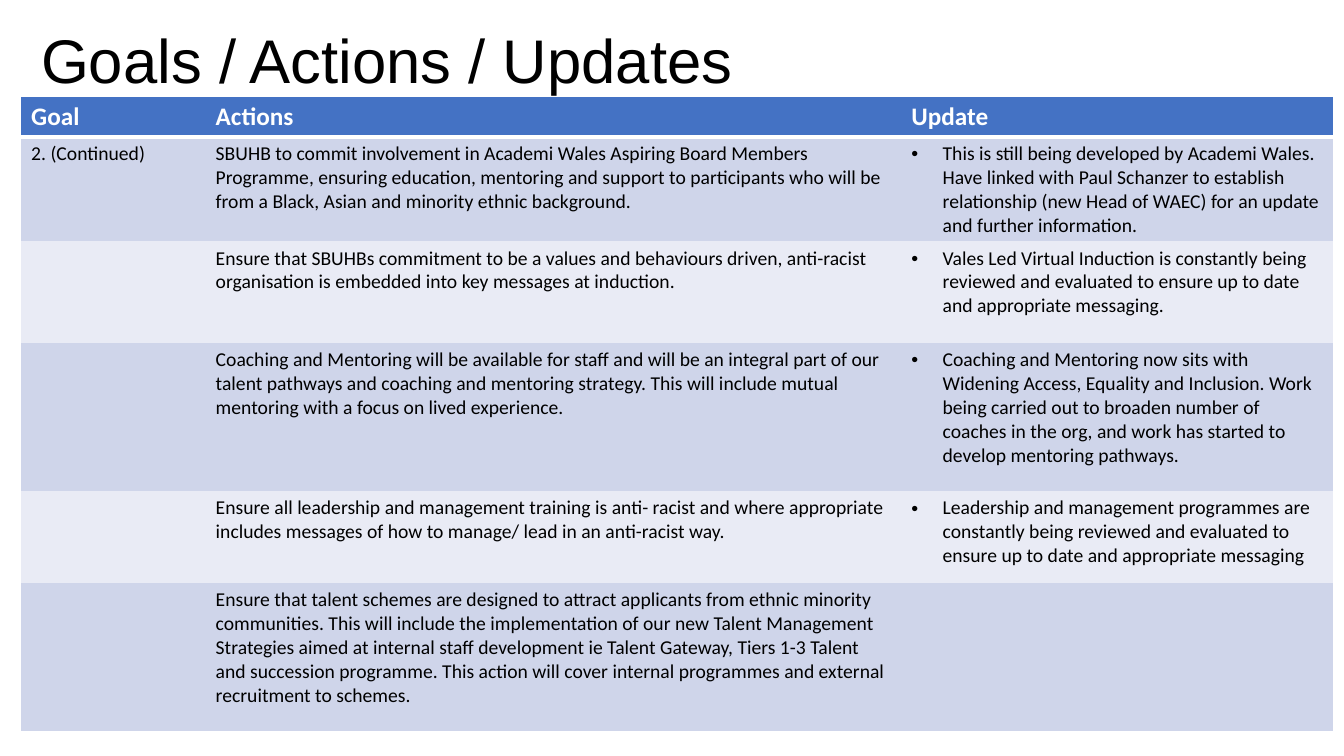
from lxml import etree
from pptx import Presentation
from pptx.dml.color import RGBColor
from pptx.enum.text import MSO_ANCHOR
from pptx.oxml.ns import qn
from pptx.util import Inches, Pt

MIDDLE = MSO_ANCHOR.MIDDLE
BLACK = RGBColor(0x00, 0x00, 0x00)
WHITE = RGBColor(0xFF, 0xFF, 0xFF)
HEADER_BLUE = RGBColor(0x44, 0x72, 0xC4)
BAND_FILLS = (RGBColor(0xCF, 0xD5, 0xEA), RGBColor(0xE9, 0xEB, 0xF5))
PLAIN_STYLE = "{2D5ABB26-0587-4C30-8999-92F81FD0307C}"

# Content
TITLE = "Goals / Actions / Updates"
ROWS = [
    ("Goal", "Actions", "Update"),
    ("2. (Continued)",
     "SBUHB to commit involvement in Academi Wales Aspiring Board Members Programme, "
     "ensuring education, mentoring and support to participants who will be from a "
     "Black, Asian and minority ethnic background.",
     "This is still being developed by Academi Wales. Have linked with Paul Schanzer to "
     "establish relationship (new Head of WAEC) for an update and further information."),
    ("",
     "Ensure that SBUHBs commitment to be a values and behaviours driven, anti-racist "
     "organisation is embedded into key messages at induction.",
     "Vales Led Virtual Induction is constantly being reviewed and evaluated to ensure "
     "up to date and appropriate messaging."),
    ("",
     "Coaching and Mentoring will be available for staff and will be an integral part of "
     "our talent pathways and coaching and mentoring strategy. This will include mutual "
     "mentoring with a focus on lived experience.",
     "Coaching and Mentoring now sits with Widening Access, Equality and Inclusion. Work "
     "being carried out to broaden number of coaches in the org, and work has started to "
     "develop mentoring pathways."),
    ("",
     "Ensure all leadership and management training is anti- racist and where appropriate "
     "includes messages of how to manage/ lead in an anti-racist way.",
     "Leadership and management programmes are constantly being reviewed and evaluated to "
     "ensure up to date and appropriate messaging"),
    ("",
     "Ensure that talent schemes are designed to attract applicants from ethnic minority "
     "communities. This will include the implementation of our new Talent Management "
     "Strategies aimed at internal staff development ie Talent Gateway, Tiers 1-3 Talent "
     "and succession programme. This action will cover internal programmes and external "
     "recruitment to schemes.",
     ""),
]
COLUMN_WIDTHS = (1.83, 6.9, 4.28)
ROW_HEIGHTS = (0.39, 1.01, 1.01, 1.47, 0.91, 1.47)
UPDATE_COLUMN = 2


def set_font(para, name, size, color, bold=False):
    font = para.font
    font.name, font.size, font.bold = name, Pt(size), bold
    font.color.rgb = color


def add_bullet(para):
    properties = para._p.get_or_add_pPr()
    properties.set("marL", str(Inches(0.31)))
    properties.set("indent", str(-Inches(0.31)))
    etree.SubElement(properties, qn("a:buFont"), typeface="Arial")
    etree.SubElement(properties, qn("a:buChar"), char="•")


def add_bottom_border(cell, color, points):
    line = etree.Element(qn("a:lnB"), w=str(Pt(points)))
    fill = etree.SubElement(line, qn("a:solidFill"))
    etree.SubElement(fill, qn("a:srgbClr"), val=str(color))
    cell._tc.get_or_add_tcPr().insert(0, line)


deck = Presentation()
deck.slide_width, deck.slide_height = Inches(13.33), Inches(7.5)
page = deck.slides.add_slide(deck.slide_layouts[6])

# Title
box = page.shapes.add_textbox(Inches(0.31), Inches(-0.22), Inches(11.5), Inches(1.71))
box.text_frame.word_wrap = True
box.text_frame.vertical_anchor = MIDDLE
heading = box.text_frame.paragraphs[0]
heading.text = TITLE
heading.line_spacing = 0.9
set_font(heading, "Arial", 44, BLACK)

# Goals table
frame = page.shapes.add_table(
    len(ROWS), len(COLUMN_WIDTHS), Inches(0.21), Inches(0.96),
    Inches(sum(COLUMN_WIDTHS)), Inches(sum(ROW_HEIGHTS)))
table = frame.table
table._tbl.tblPr.find(qn("a:tableStyleId")).text = PLAIN_STYLE
for column, width in zip(table.columns, COLUMN_WIDTHS):
    column.width = Inches(width)
for row, height in zip(table.rows, ROW_HEIGHTS):
    row.height = Inches(height)

for row_index, texts in enumerate(ROWS):
    is_header = row_index == 0
    for column_index, text in enumerate(texts):
        cell = table.cell(row_index, column_index)
        cell.fill.solid()
        cell.fill.fore_color.rgb = HEADER_BLUE if is_header else BAND_FILLS[(row_index - 1) % 2]
        para = cell.text_frame.paragraphs[0]
        if text:
            para.text = text
        if is_header:
            add_bottom_border(cell, WHITE, 3)
            set_font(para, "Calibri", 18, WHITE, bold=True)
        else:
            if text and column_index == UPDATE_COLUMN:
                add_bullet(para)
            set_font(para, "Calibri", 14, BLACK)

deck.save("out.pptx")
